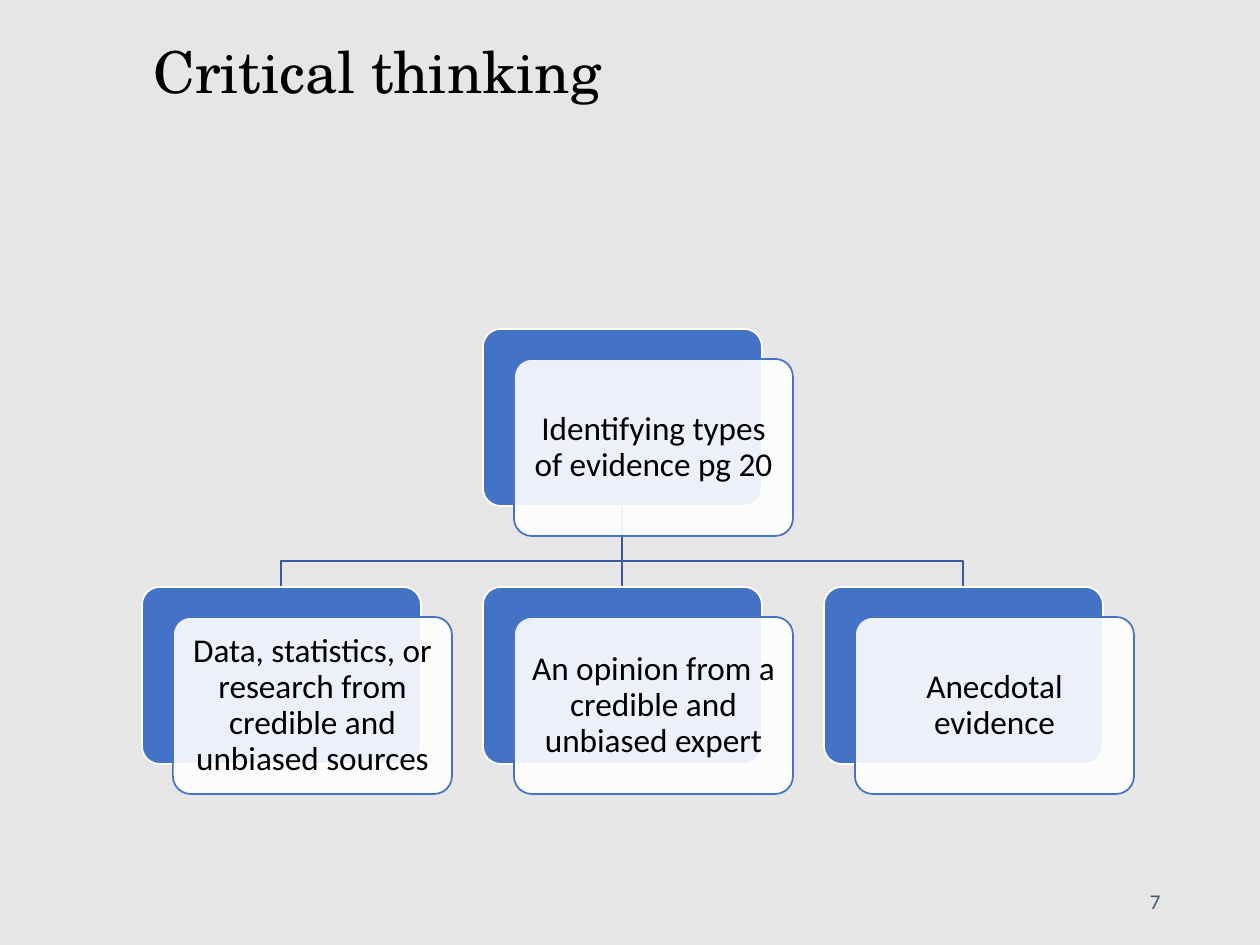
from lxml.etree import SubElement
from pptx import Presentation
from pptx.dml.color import RGBColor
from pptx.enum.shapes import MSO_CONNECTOR, MSO_SHAPE
from pptx.enum.text import MSO_ANCHOR, PP_ALIGN
from pptx.oxml.ns import qn
from pptx.util import Emu, Pt

EMU_PER_PX = 914400 / 126

CARD_WIDTH, CARD_HEIGHT = 279, 177
CARD_OFFSET_X, CARD_OFFSET_Y = 31, 30
COLUMN_STEP, ROW_STEP = 341, 258
BRANCH_DROP = 55
BLUE, DARK_BLUE, WHITE, BLACK = "4472C4", "365B9D", "FFFFFF", "000000"


def px(length):
    return Emu(round(length * EMU_PER_PX))


def color(hex_value):
    return RGBColor.from_string(hex_value)


def set_line(line, hex_value):
    line.color.rgb = color(hex_value)
    line.width = Pt(1)


def add_text(slide, box, text, size, font_name, hex_value, align=PP_ALIGN.LEFT,
             anchor=MSO_ANCHOR.TOP, inset=None, line_spacing=None, space_after=0):
    text_box = slide.shapes.add_textbox(*map(px, box))
    frame = text_box.text_frame
    frame.word_wrap = True
    frame.vertical_anchor = anchor
    if inset is not None:
        frame.margin_left = frame.margin_right = px(inset)
        frame.margin_top = frame.margin_bottom = px(inset)
    paragraph = frame.paragraphs[0]
    paragraph.text = text
    paragraph.alignment = align
    paragraph.line_spacing = line_spacing
    paragraph.space_after = Pt(space_after)
    paragraph.font.size = Pt(size)
    paragraph.font.name = font_name
    paragraph.font.color.rgb = color(hex_value)


def add_panel(slide, left, top, fill, outline, opacity=100):
    panel = slide.shapes.add_shape(
        MSO_SHAPE.ROUNDED_RECTANGLE, px(left), px(top), px(CARD_WIDTH), px(CARD_HEIGHT))
    panel.adjustments[0] = 0.1
    panel.shadow.inherit = False
    panel.fill.solid()
    panel.fill.fore_color.rgb = color(fill)
    set_line(panel.line, outline)
    if opacity < 100:
        fill_color = panel.fill._xPr.find(qn("a:solidFill"))[0]
        SubElement(fill_color, qn("a:alpha")).set("val", str(opacity * 1000))


def add_card(slide, left, top, text):
    """A blue panel with a translucent text panel shifted over it."""
    add_panel(slide, left, top, BLUE, WHITE)
    front_left, front_top = left + CARD_OFFSET_X, top + CARD_OFFSET_Y
    add_panel(slide, front_left, front_top, WHITE, BLUE, opacity=90)
    margin = 5
    text_area = (front_left + margin, front_top + margin,
                 CARD_WIDTH - 2 * margin, CARD_HEIGHT - 2 * margin)
    add_text(slide, text_area, text, 19, "Calibri", BLACK, PP_ALIGN.CENTER,
             MSO_ANCHOR.MIDDLE, inset=10, line_spacing=0.9, space_after=6.65)


def add_branch(slide, start_x, start_y, end_x, end_y):
    """A straight line down, or an elbow when the ends are not aligned."""
    if start_x == end_x:
        branch = slide.shapes.add_connector(
            MSO_CONNECTOR.STRAIGHT, px(start_x), px(start_y), px(end_x), px(end_y))
        SubElement(branch._element.spPr, qn("a:effectLst"))
        set_line(branch.line, DARK_BLUE)
        return
    bend_y = start_y + BRANCH_DROP
    builder = slide.shapes.build_freeform(start_x, start_y, scale=EMU_PER_PX)
    builder.add_line_segments(
        [(start_x, bend_y), (end_x, bend_y), (end_x, end_y)], close=False)
    branch = builder.convert_to_shape()
    branch.shadow.inherit = False
    branch.fill.background()
    set_line(branch.line, DARK_BLUE)


def add_hierarchy(slide, left, top, root_text, child_texts):
    root_left = left + COLUMN_STEP * (len(child_texts) - 1) // 2
    child_top = top + ROW_STEP
    child_lefts = [left + COLUMN_STEP * column for column in range(len(child_texts))]

    # Branches lie behind the cards
    half_width = CARD_WIDTH // 2
    for child_left in reversed(child_lefts):
        add_branch(slide, root_left + half_width, top + CARD_HEIGHT,
                   child_left + half_width, child_top)

    # Cards
    add_card(slide, root_left, top, root_text)
    for child_left, text in zip(child_lefts, child_texts):
        add_card(slide, child_left, child_top, text)


def main():
    presentation = Presentation()
    presentation.slide_width, presentation.slide_height = px(1260), px(945)
    slide = presentation.slides.add_slide(presentation.slide_layouts[6])
    slide.background.fill.solid()
    slide.background.fill.fore_color.rgb = color("E7E6E6")

    # Title
    add_text(slide, (141, 37, 993, 204), "Critical thinking", 33,
             "TeX Gyre Schola", BLACK, line_spacing=0.9)

    # Types of evidence
    add_hierarchy(slide, 142, 329, "Identifying types of evidence pg 20", [
        "Data, statistics, or research from credible and unbiased sources",
        "An opinion from a credible and unbiased expert",
        "Anecdotal evidence",
    ])

    # Page number
    add_text(slide, (890, 876, 283, 50), "7", 12, "Calibri", "44546A",
             PP_ALIGN.RIGHT, MSO_ANCHOR.MIDDLE, space_after=6)

    presentation.save("out.pptx")


if __name__ == "__main__":
    main()
